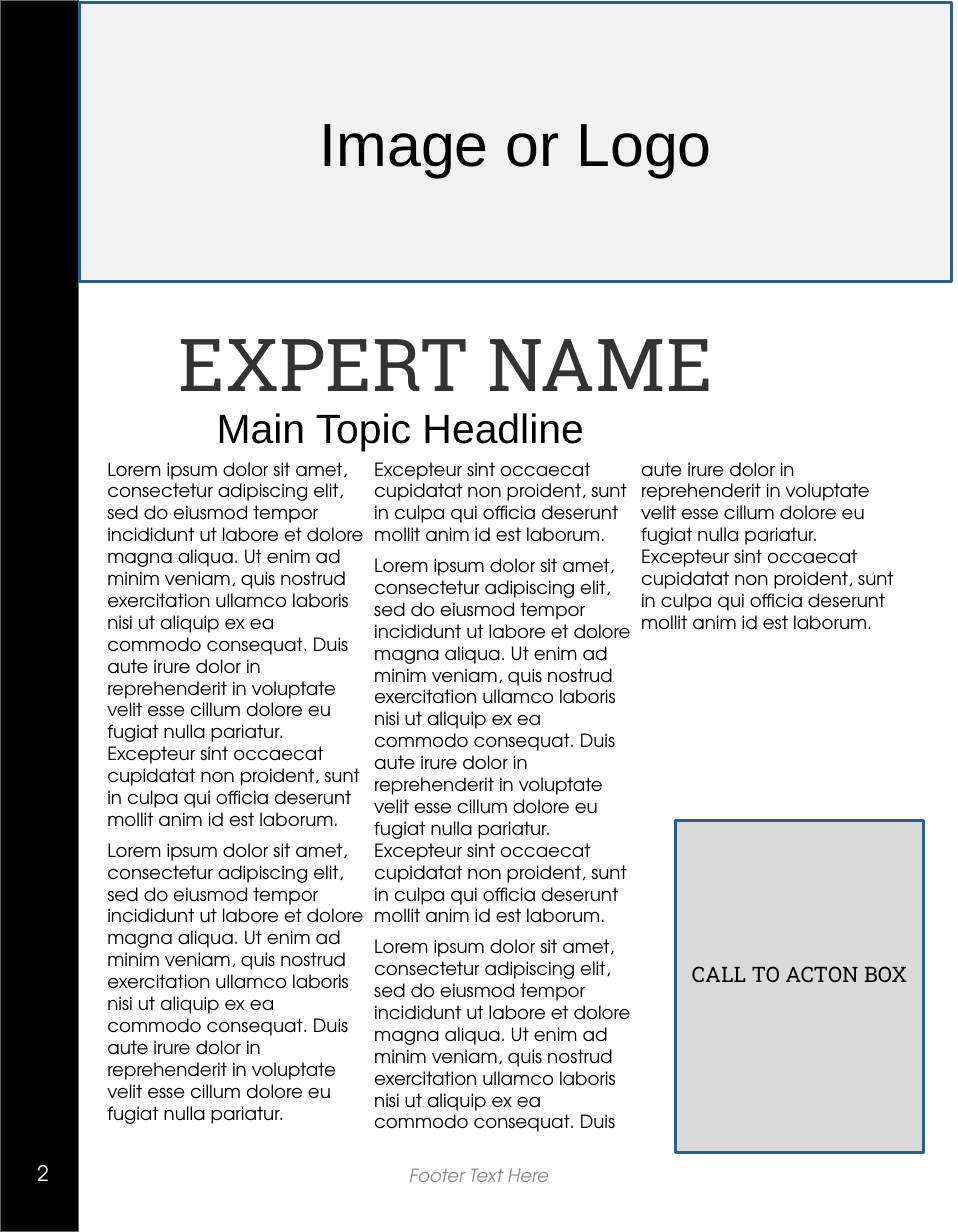
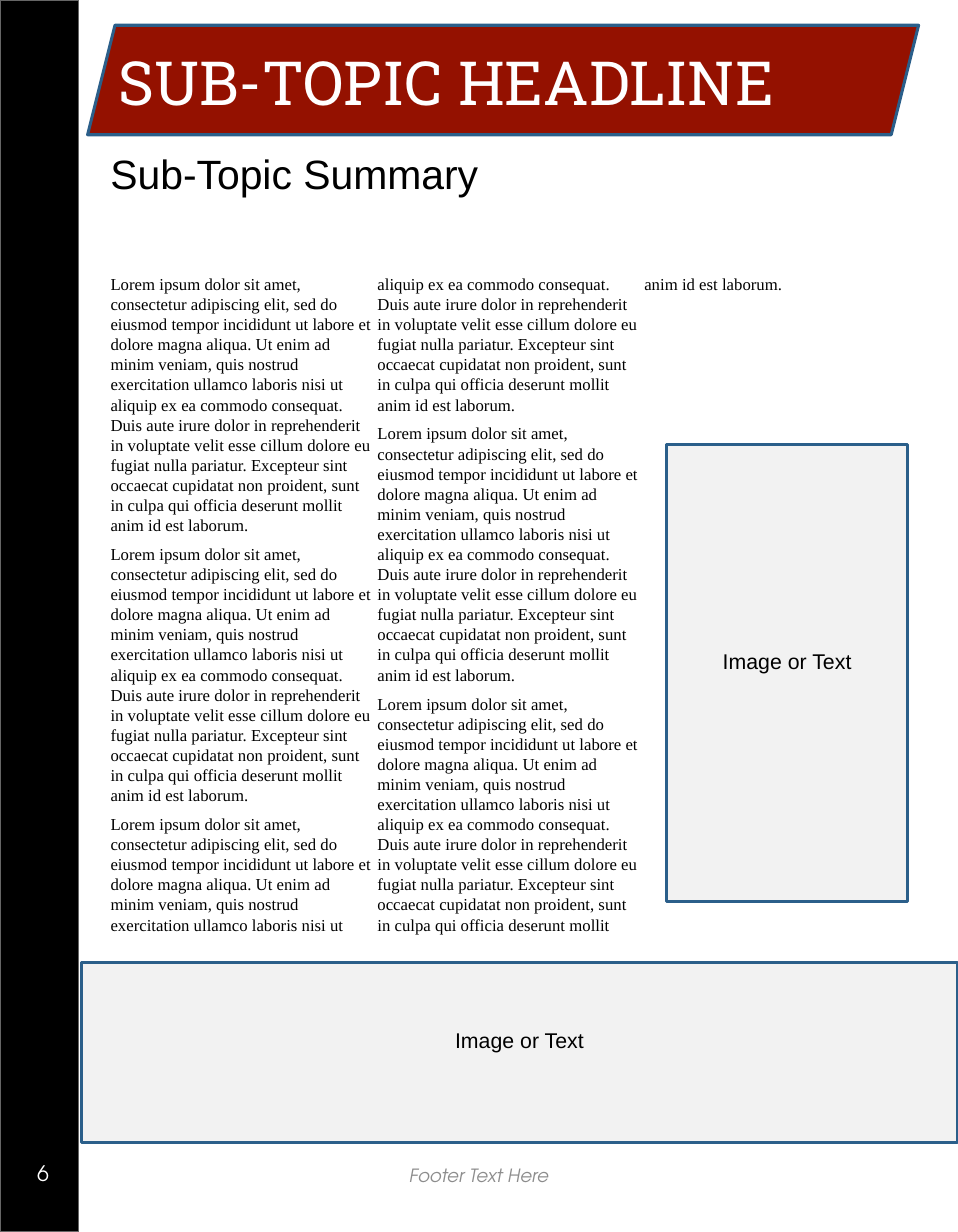
from pptx import Presentation
from pptx.dml.color import RGBColor
from pptx.enum.shapes import MSO_SHAPE
from pptx.enum.text import MSO_ANCHOR, MSO_AUTO_SIZE, PP_ALIGN
from pptx.oxml.xmlchemy import OxmlElement
from pptx.util import Pt

RECTANGLE, PARALLELOGRAM = MSO_SHAPE.RECTANGLE, MSO_SHAPE.PARALLELOGRAM
TOP, MIDDLE = MSO_ANCHOR.TOP, MSO_ANCHOR.MIDDLE
LEFT, CENTER = PP_ALIGN.LEFT, PP_ALIGN.CENTER
NO_AUTOFIT = MSO_AUTO_SIZE.NONE

BLACK = RGBColor(0x00, 0x00, 0x00)
WHITE = RGBColor(0xFF, 0xFF, 0xFF)
CHARCOAL = RGBColor(0x33, 0x33, 0x33)
EDGE_GRAY = RGBColor(0x66, 0x66, 0x66)
FOOTER_GRAY = RGBColor(0x8C, 0x8C, 0x8C)
MID_GRAY = RGBColor(0xD9, 0xD9, 0xD9)
PALE_GRAY = RGBColor(0xF2, 0xF2, 0xF2)
BLUE = RGBColor(0x2B, 0x5F, 0x8A)
RED = RGBColor(0x94, 0x11, 0x00)

SLAB, SANS = "Roboto Slab", "Arial"
GEOMETRIC, SERIF = "TeX Gyre Adventor", "Times New Roman"

WIDTH, HEIGHT = 630, 810
WIDE_INSETS = (7.2, 7.2, 7.2, 7.2)
NARROW_INSETS = (7.2, 3.6, 7.2, 3.6)
RAISED_INSETS = (7.2, 3.6, 7.2, 19.6)  # lifts centred text by half a line

LOREM = (
    "Lorem ipsum dolor sit amet, consectetur adipiscing elit, sed do eiusmod "
    "tempor incididunt ut labore et dolore magna aliqua. Ut enim ad minim "
    "veniam, quis nostrud exercitation ullamco laboris nisi ut aliquip ex ea "
    "commodo consequat. Duis aute irure dolor in reprehenderit in voluptate "
    "velit esse cillum dolore eu fugiat nulla pariatur. Excepteur sint occaecat "
    "cupidatat non proident, sunt in culpa qui officia deserunt mollit anim id "
    "est laborum."
)


def write_text(shape, *texts, size, font, color=BLACK, italic=False, align=LEFT,
               anchor=TOP, insets=NARROW_INSETS, wrap=True, line_spacing=1.0,
               space_before=0, indent=None):
    """Write one paragraph per text; an indent also turns bullets off."""
    frame = shape.text_frame
    frame.word_wrap = wrap
    frame.auto_size = NO_AUTOFIT
    frame.vertical_anchor = anchor
    (frame.margin_left, frame.margin_top,
     frame.margin_right, frame.margin_bottom) = map(Pt, insets)
    for index, text in enumerate(texts):
        paragraph = frame.add_paragraph() if index else frame.paragraphs[0]
        paragraph.text = text
        paragraph.alignment = align
        paragraph.line_spacing = line_spacing
        paragraph.space_before = Pt(space_before if index else 0)
        paragraph.space_after = Pt(0)
        if indent is not None:
            properties = paragraph._p.get_or_add_pPr()
            properties.set("marL", str(Pt(indent)))
            properties.set("indent", "0")
            properties.append(OxmlElement("a:buNone"))
        run_font = paragraph.runs[0].font
        run_font.name, run_font.size = font, Pt(size)
        run_font.color.rgb = color
        run_font.bold, run_font.italic = False, italic


class Newsletter:
    """Holds the shared style and the current slide."""

    def __init__(self):
        self.presentation = Presentation()
        self.presentation.slide_width = Pt(WIDTH)
        self.presentation.slide_height = Pt(HEIGHT)
        self.slide = None

    def add_page(self, number):
        layout = self.presentation.slide_layouts[1]
        self.slide = self.presentation.slides.add_slide(layout)
        # Sidebar with page number
        self.box(0, 0, 51.8, HEIGHT, BLACK, line=EDGE_GRAY, line_width=0.75)
        self.text(17.3, 759.6, 31.7, 24.5, number, size=14, font=GEOMETRIC,
                  color=WHITE, wrap=False)
        # Footer
        self.text(208.8, 751, 212.4, 43.2, "Footer Text Here", size=12,
                  font=GEOMETRIC, color=FOOTER_GRAY, italic=True,
                  align=CENTER, anchor=MIDDLE)

    def box(self, left, top, width, height, fill, kind=RECTANGLE, line=BLUE,
            line_width=2):
        shape = self.slide.shapes.add_shape(
            kind, Pt(left), Pt(top), Pt(width), Pt(height))
        shape.shadow.inherit = False
        shape.fill.solid()
        shape.fill.fore_color.rgb = fill
        shape.line.color.rgb = line
        shape.line.width = Pt(line_width)
        return shape

    def label_box(self, left, top, width, height, label, fill=PALE_GRAY,
                  size=14, font=SANS, insets=RAISED_INSETS):
        shape = self.box(left, top, width, height, fill)
        write_text(shape, label, size=size, font=font, align=CENTER,
                   anchor=MIDDLE, insets=insets)

    def text(self, left, top, width, height, text, **text_format):
        shape = self.slide.shapes.add_textbox(
            Pt(left), Pt(top), Pt(width), Pt(height))
        write_text(shape, text, **text_format)

    def headline(self, left, top, width, height, text):
        self.text(left, top, width, height, text, size=26.9, font=SANS,
                  insets=WIDE_INSETS)

    def place(self, shape, left, top, width, height):
        shape.left, shape.top = Pt(left), Pt(top)
        shape.width, shape.height = Pt(width), Pt(height)

    def title(self, left, top, width, height, text, **text_format):
        shape = self.slide.shapes.title
        self.place(shape, left, top, width, height)
        write_text(shape, text, font=SLAB, insets=WIDE_INSETS, **text_format)
        # Bring the title in front of its band
        self.slide.shapes._spTree.append(shape._element)

    def article(self, left, top, width, height, count, **text_format):
        shape = self.slide.placeholders[1]
        self.place(shape, left, top, width, height)
        write_text(shape, *[LOREM] * count, insets=WIDE_INSETS,
                   space_before=5.8, indent=2.9, **text_format)
        body = shape.text_frame._txBody.bodyPr
        body.set("numCol", "3")
        body.set("spcCol", str(Pt(0.3)))


def main():
    newsletter = Newsletter()

    # Expert page
    newsletter.add_page("2")
    newsletter.headline(135.4, 257.8, 478, 102.2, "Main Topic Headline")
    newsletter.article(60.5, 293.8, 540.7, 463.7, 4, size=12, font=GEOMETRIC)
    newsletter.label_box(444.2, 539.3, 163.4, 218.2, "CALL TO ACTON BOX",
                         fill=MID_GRAY, font=SLAB)
    newsletter.label_box(52.6, 1.4, 573.1, 183.6, "Image or Logo", size=40,
                         insets=NARROW_INSETS)
    newsletter.title(110.2, 190.8, 478, 86.4, "EXPERT NAME", size=48,
                     color=CHARCOAL, line_spacing=1.2)

    # Sub-topic page
    newsletter.add_page("6")
    newsletter.article(62.6, 172.8, 540.7, 449.3, 5, size=11, font=SERIF)
    newsletter.label_box(53.3, 632.9, 576.7, 118.1, "Image or Text")
    newsletter.headline(65.5, 90.7, 429.8, 86.4, "Sub-Topic Summary")
    newsletter.box(57.6, 16.6, 546.5, 72, RED, kind=PARALLELOGRAM)
    newsletter.label_box(438.5, 292.3, 158.4, 300.2, "Image or Text")
    newsletter.title(70.6, 22.3, 519.8, 50.4, "SUB-TOPIC HEADLINE", size=40,
                     color=WHITE)

    newsletter.presentation.save("out.pptx")


if __name__ == "__main__":
    main()
